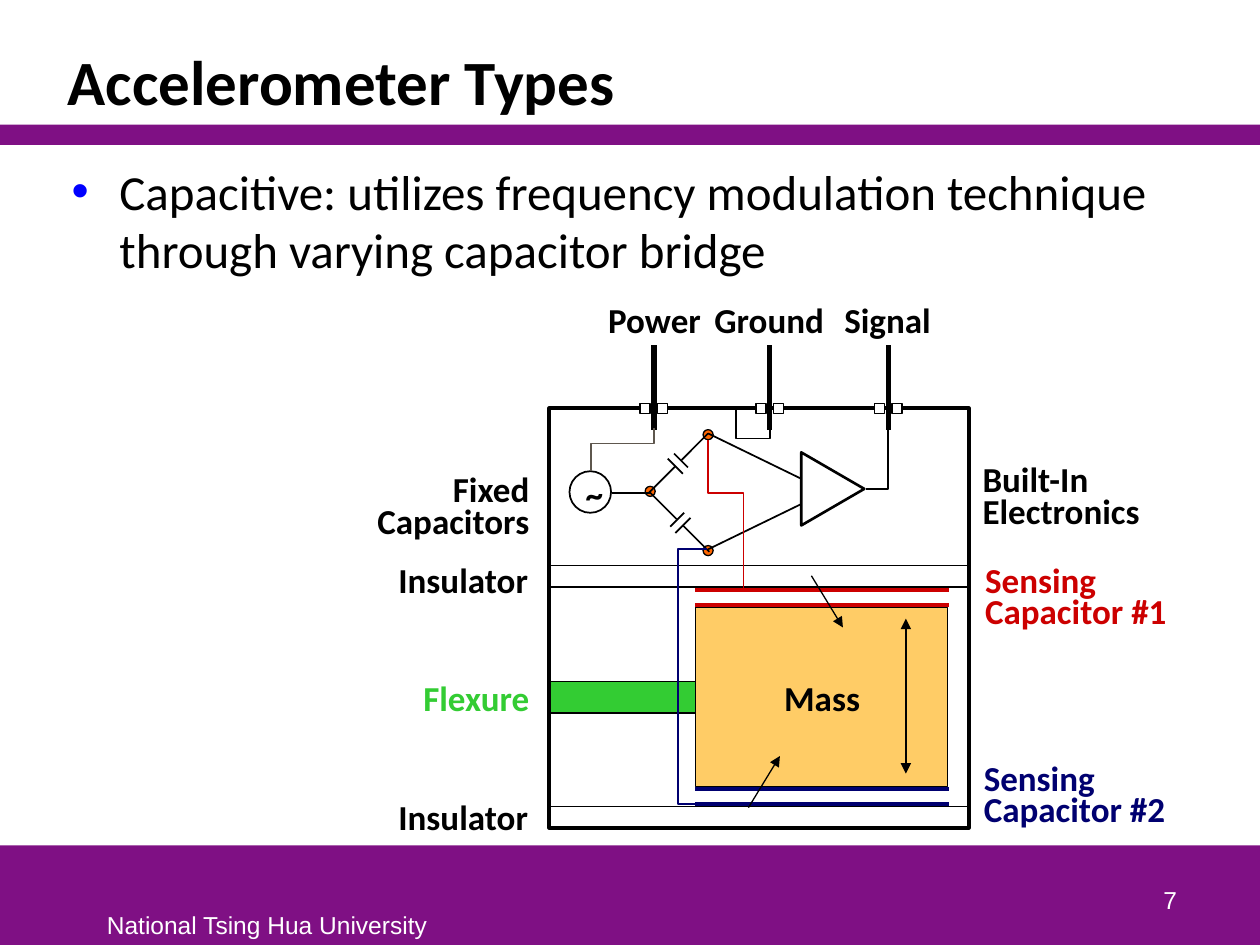
import pptx
import pptx.util
import pptx.dml.color
import pptx.enum.shapes
import pptx.enum.text
import pptx.oxml

Inches = pptx.util.Inches
Pt = pptx.util.Pt
hue = pptx.dml.color.RGBColor.from_string
kinds = pptx.enum.shapes.MSO_SHAPE
fits = pptx.enum.text.MSO_AUTO_SIZE
sides = pptx.enum.text.PP_ALIGN
LEFT, MID, RIGHT = sides.LEFT, sides.CENTER, sides.RIGHT
BLACK, WHITE, RED, NAVY = "000000", "FFFFFF", "CC0000", "000070"
PURPLE, GREEN, GOLD, ORANGE = "7F1084", "33CC33", "FFCC66", "FF6600"

deck = pptx.Presentation()
deck.slide_width, deck.slide_height = Inches(10), Inches(7.5)
slide = deck.slides.add_slide(deck.slide_layouts[6])
shapes = slide.shapes


def paint(shape, fill, color, width):
    shape.shadow.inherit = False
    if fill:
        shape.fill.solid()
        shape.fill.fore_color.rgb = hue(fill)
    else:
        shape.fill.background()
    if color:
        shape.line.color.rgb = hue(color)
        shape.line.width = Pt(width)
    else:
        shape.line.fill.background()


def write(words, place, size, color, side=LEFT, gap=None, bold=True, font="Calibri"):
    frame = shapes.add_textbox(*map(Inches, place)).text_frame
    frame.word_wrap = True
    para = frame.paragraphs[0]
    para.alignment = side
    para.line_spacing = gap
    run = para.add_run()
    run.text = words
    run.font.size = Pt(size)
    run.font.bold = bold
    run.font.name = font
    run.font.color.rgb = hue(color)
    return frame


for top, high in ((6.71, 0.79), (0.99, 0.16)):
    band = shapes.add_shape(kinds.RECTANGLE, 0, Inches(top), Inches(10), Inches(high))
    paint(band, PURPLE, None, 0)

foot = write("National Tsing Hua University", (0.75, 7.17, 2.76, 0.33), 14, WHITE,
             bold=False, font="Arial")
foot.word_wrap = False
title = write("Accelerometer Types", (0.44, 0.25, 8.97, 0.74), 36, BLACK, gap=0.85)
number = write("7", (7.36, 6.81, 2.08, 0.5), 14, WHITE, RIGHT, bold=False, font="Arial")
for frame in (title, number):
    frame.vertical_anchor = pptx.enum.text.MSO_ANCHOR.BOTTOM

body = write("Capacitive: utilizes frequency modulation technique through varying capacitor bridge",
             (0.47, 1.23, 8.94, 1.1), 28, BLACK, bold=False)
props = body.paragraphs[0]._p.get_or_add_pPr()
props.set("marL", str(Inches(0.38)))
props.set("indent", str(-Inches(0.38)))
space = 'xmlns:a="http://schemas.openxmlformats.org/drawingml/2006/main"'
for mark in (f'<a:buClr {space}><a:srgbClr val="0000FF"/></a:buClr>',
             f'<a:buFont {space} typeface="Arial"/>',
             f'<a:buChar {space} char="•"/>'):
    props.append(pptx.oxml.parse_xml(mark))

pins = (5.19, 6.11, 7.05)
parts = [
    (kinds.RECTANGLE, 4.36, 5.41, 1.58, 0.25, GREEN, 0.75),
    (kinds.RECTANGLE, 5.52, 4.82, 2, 1.42, GOLD, 0.75),
    (kinds.RECTANGLE, 4.36, 4.49, 3.32, 0.17, WHITE, 0.75),
    (kinds.RECTANGLE, 4.36, 6.4, 3.32, 0.17, WHITE, 0.75),
    (kinds.RECTANGLE, 4.36, 3.24, 3.33, 3.33, None, 2.25),
    (kinds.OVAL, 4.52, 3.74, 0.33, 0.33, None, 1),
]
for x in pins:
    for shift in (-0.11, 0.03):
        parts.append((kinds.RECTANGLE, x + shift, 3.2, 0.08, 0.08, WHITE, 0.75))
for x, y in ((5.12, 3.86), (5.58, 3.41), (5.58, 4.33)):
    parts.append((kinds.OVAL, x, y, 0.08, 0.08, ORANGE, 0.75))
for kind, x, y, wide, high, fill, width in parts:
    part = shapes.add_shape(kind, *map(Inches, (x, y, wide, high)))
    paint(part, fill, BLACK, width)

lines = [(x, 2.74, x, 3.41, BLACK, 3, "") for x in pins]
for y, color in ((4.68, RED), (4.8, RED), (6.26, NAVY), (6.38, NAVY)):
    lines.append((5.52, y, 7.53, y, color, 2.25, ""))
for ends in (
    (5.42, 4.17, 5.63, 4.38), (5.16, 3.91, 5.37, 4.12),
    (5.43, 4.07, 5.32, 4.18), (5.48, 4.11, 5.36, 4.23),
    (5.36, 3.7, 5.15, 3.91), (5.62, 3.44, 5.41, 3.65),
    (5.46, 3.71, 5.35, 3.6), (5.42, 3.76, 5.3, 3.64),
    (4.86, 3.91, 5.17, 3.91), (5.62, 3.44, 6.36, 3.8),
    (5.62, 4.36, 6.36, 4),
):
    lines.append((*ends, BLACK, 1, ""))
lines += [
    (6.44, 4.57, 6.69, 4.98, BLACK, 0.75, "tail"),
    (5.94, 6.41, 6.19, 6, BLACK, 0.75, "tail"),
    (7.19, 4.91, 7.19, 6.14, BLACK, 1, "head tail"),
]
for *ends, color, width, tips in lines:
    line = shapes.add_connector(pptx.enum.shapes.MSO_CONNECTOR.STRAIGHT, *map(Inches, ends))
    line.line.color.rgb = hue(color)
    line.line.width = Pt(width)
    for tip in tips.split():
        head = pptx.oxml.parse_xml(f'<a:{tip}End {space} type="triangle"/>')
        line.line._get_or_add_ln().append(head)
    line._element.spPr.append(pptx.oxml.parse_xml(f"<a:effectLst {space}/>"))

wires = (
    (((6.36, 3.59), (6.86, 3.88), (6.36, 4.17)), True, BLACK, 1.5),
    (((6.11, 3.4), (6.11, 3.48), (5.84, 3.48), (5.84, 3.24)), False, BLACK, 1),
    (((5.19, 3.4), (5.19, 3.52), (4.69, 3.52), (4.69, 3.74)), False, "5E574E", 1),
    (((5.53, 6.38), (5.38, 6.38), (5.38, 4.36), (5.61, 4.36)), False, NAVY, 1),
    (((5.62, 3.49), (5.62, 3.91), (5.9, 3.91), (5.9, 4.68)), False, RED, 1),
    (((7.05, 3.41), (7.05, 3.88), (6.87, 3.88)), False, BLACK, 1),
)
for points, closed, color, width in wires:
    start, *rest = [(Inches(x), Inches(y)) for x, y in points]
    pen = shapes.build_freeform(*start)
    pen.add_line_segments(rest, close=closed)
    paint(pen.convert_to_shape(), None, color, width)

labels = (
    ("Power", 4.61, 2.32, 1.17, 0.44, BLACK, MID, None),
    ("Ground", 5.52, 2.32, 1.17, 0.44, BLACK, MID, None),
    ("Signal", 6.46, 2.32, 1.17, 0.44, BLACK, MID, None),
    ("Mass", 6.11, 5.32, 0.83, 0.44, BLACK, MID, None),
    ("~", 4.55, 3.78, 0.25, 0.35, BLACK, LEFT, 0.75),
    ("Built-In Electronics", 7.7, 3.66, 2, 0.61, BLACK, LEFT, 0.75),
    ("Sensing Capacitor #1", 7.72, 4.46, 2, 0.61, RED, LEFT, 0.75),
    ("Sensing Capacitor #2", 7.71, 6.03, 2, 0.61, NAVY, LEFT, 0.75),
    ("Fixed Capacitors", 2.47, 3.74, 1.83, 0.61, BLACK, RIGHT, 0.75),
    ("Insulator", 2.46, 4.46, 1.83, 0.35, BLACK, RIGHT, 0.75),
    ("Flexure", 2.72, 5.4, 1.58, 0.35, GREEN, RIGHT, 0.75),
    ("Insulator", 2.46, 6.34, 1.83, 0.35, BLACK, RIGHT, 0.75),
)
for words, x, y, wide, high, color, side, gap in labels:
    label = write(words, (x, y, wide, high), 20, color, side, gap)
    label.auto_size = fits.SHAPE_TO_FIT_TEXT

deck.save("out.pptx")
